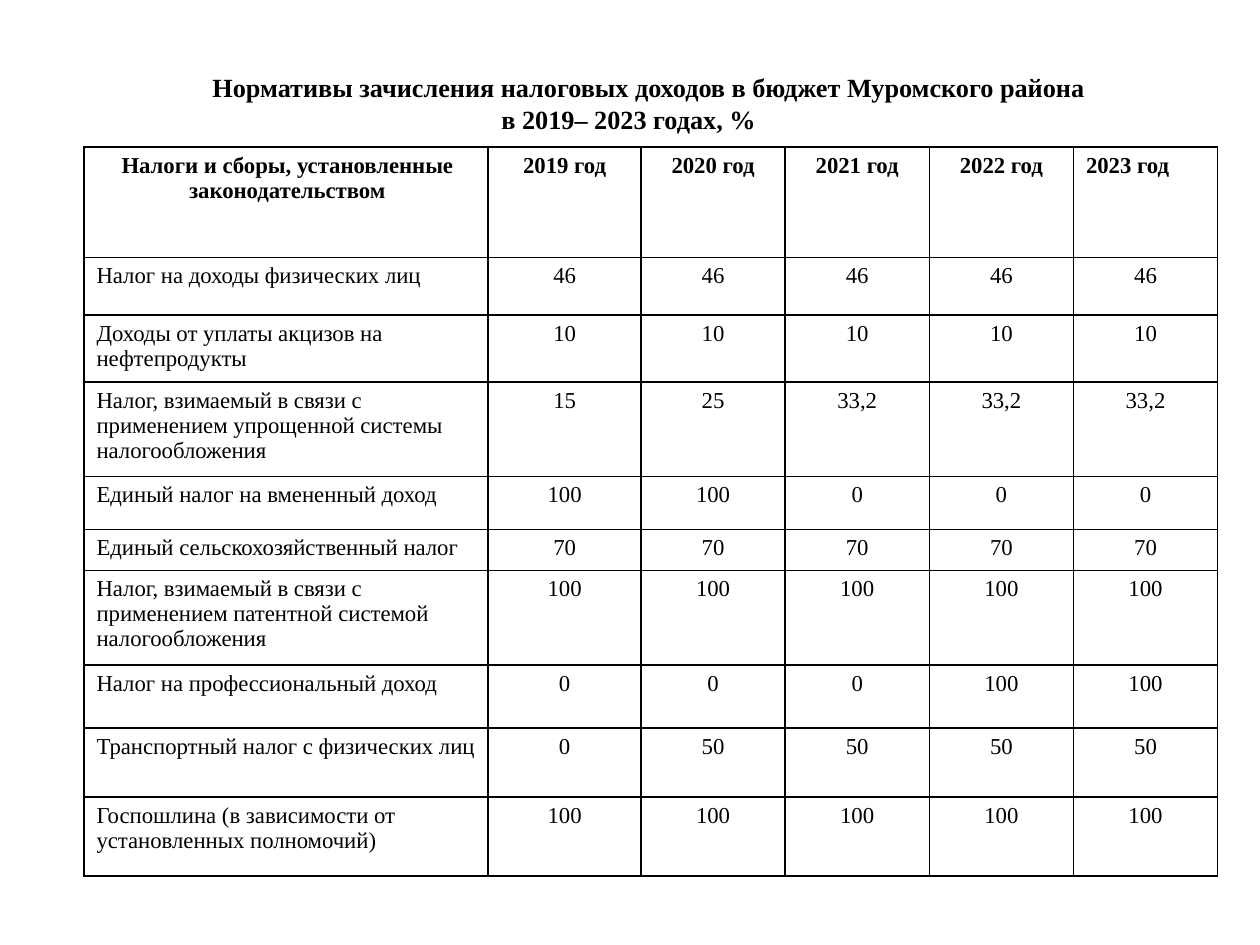
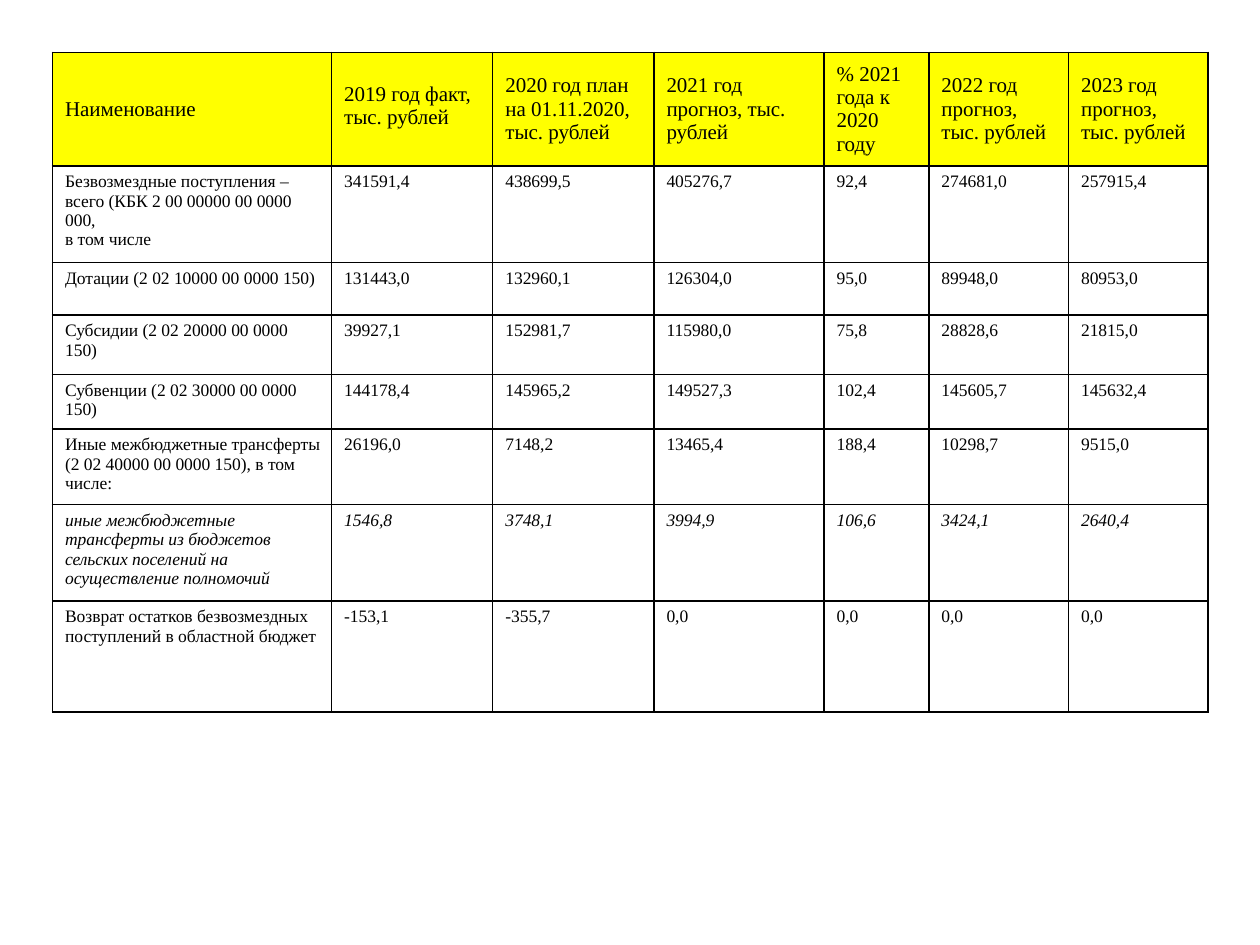
"""Builds two slides of tables on the district budget's tax rates and transfers."""
import pptx
import pptx.dml.color
import pptx.enum.text
import pptx.util
from lxml import etree
from pptx.oxml.ns import qn

Pt = pptx.util.Pt
ALIGN = pptx.enum.text.PP_ALIGN
ANCHOR = pptx.enum.text.MSO_ANCHOR
BLACK = pptx.dml.color.RGBColor(0x00, 0x00, 0x00)
YELLOW = pptx.dml.color.RGBColor(0xFF, 0xFF, 0x00)
FONT = "Times New Roman"
TITLE_ONLY, BLANK = 5, 6

TITLE = "Нормативы зачисления налоговых доходов в бюджет Муромского района\nв 2019– 2023 годах, %"
RATES = [
    ("Налоги и сборы, установленные законодательством",
     "2019 год", "2020 год", "2021 год", "2022 год", "2023 год"),
    ("Налог на доходы физических лиц", "46", "46", "46", "46", "46"),
    ("Доходы от уплаты акцизов на нефтепродукты", "10", "10", "10", "10", "10"),
    ("Налог, взимаемый в связи с применением упрощенной системы налогообложения",
     "15", "25", "33,2", "33,2", "33,2"),
    ("Единый налог на вмененный доход", "100", "100", "0", "0", "0"),
    ("Единый сельскохозяйственный налог", "70", "70", "70", "70", "70"),
    ("Налог, взимаемый в связи с применением патентной системой налогообложения",
     "100", "100", "100", "100", "100"),
    ("Налог на профессиональный доход", "0", "0", "0", "100", "100"),
    ("Транспортный налог с физических лиц", "0", "50", "50", "50", "50"),
    ("Госпошлина (в зависимости от установленных полномочий)",
     "100", "100", "100", "100", "100"),
]
RATE_WIDTHS = [231, 87.3] + [82.4] * 4
RATE_HEIGHTS = [63.2, 32.9, 38.2, 54, 30.2, 23.6, 54, 36, 39.4, 45.3]

TRANSFERS = [
    ("Наименование", "2019 год факт, тыс. рублей",
     "2020 год план на 01.11.2020, тыс. рублей", "2021 год прогноз, тыс. рублей",
     "% 2021 года к 2020 году", "2022 год прогноз, тыс. рублей",
     "2023 год прогноз, тыс. рублей"),
    ("Безвозмездные поступления – всего (КБК 2 00 00000 00 0000 000,\nв том числе",
     "341591,4", "438699,5", "405276,7", "92,4", "274681,0", "257915,4"),
    ("Дотации (2 02 10000 00 0000 150)",
     "131443,0", "132960,1", "126304,0", "95,0", "89948,0", "80953,0"),
    ("Субсидии (2 02 20000 00 0000 150)",
     "39927,1", "152981,7", "115980,0", "75,8", "28828,6", "21815,0"),
    ("Субвенции (2 02 30000 00 0000 150)",
     "144178,4", "145965,2", "149527,3", "102,4", "145605,7", "145632,4"),
    ("Иные межбюджетные трансферты (2 02 40000 00 0000 150), в том числе:",
     "26196,0", "7148,2", "13465,4", "188,4", "10298,7", "9515,0"),
    ("иные межбюджетные трансферты из бюджетов сельских поселений на осуществление полномочий",
     "1546,8", "3748,1", "3994,9", "106,6", "3424,1", "2640,4"),
    ("Возврат остатков безвозмездных поступлений в областной бюджет",
     "-153,1", "-355,7", "0,0", "0,0", "0,0", "0,0"),
]
TRANSFER_WIDTHS = [159.5, 92.1, 92.1, 97.2, 59.9, 79.8, 79.8]
TRANSFER_HEIGHTS = [64.8, 55.3, 30, 34, 31.1, 43.3, 55.1, 63.3]
ITALIC_ROW = 6


def write(frame, text, size, bold=False, italic=False, align=ALIGN.LEFT):
    for number, line in enumerate(text.split("\n")):
        para = frame.add_paragraph() if number else frame.paragraphs[0]
        para.alignment = align
        para.space_before = Pt(0)
        span = para.add_run()
        span.text = line
        span.font.name, span.font.size = FONT, Pt(size)
        span.font.bold, span.font.italic = bold, italic
        span.font.color.rgb = BLACK


def outline(cell):
    properties = cell._tc.get_or_add_tcPr()
    for side in ("a:lnL", "a:lnR", "a:lnT", "a:lnB"):
        line = etree.SubElement(properties, qn(side), w=str(Pt(1)))
        solid = etree.SubElement(line, qn("a:solidFill"))
        etree.SubElement(solid, qn("a:srgbClr"), val=str(BLACK))


def add_grid(page, left, top, rows, widths, heights, style, header_fill=None):
    frame = page.shapes.add_table(len(rows), len(widths), Pt(left), Pt(top),
                                  Pt(sum(widths)), Pt(sum(heights)))
    grid = frame.table
    grid.first_row = grid.horz_banding = False
    for column, width in zip(grid.columns, widths):
        column.width = Pt(width)
    for row, height in zip(grid.rows, heights):
        row.height = Pt(height)
    for r, values in enumerate(rows):
        for c, value in enumerate(values):
            cell = grid.cell(r, c)
            outline(cell)
            if r == 0 and header_fill is not None:
                cell.fill.solid()
                cell.fill.fore_color.rgb = header_fill
                cell.vertical_anchor = ANCHOR.MIDDLE
            else:
                cell.fill.background()
            if c == 0:
                cell.margin_right = Pt(6)
            write(cell.text_frame, value, **style(r, c))
    return grid


def rate_style(row, column):
    last_year = len(RATE_WIDTHS) - 1
    left = column == last_year if row == 0 else column == 0
    return dict(size=13, bold=row == 0, align=ALIGN.LEFT if left else ALIGN.CENTER)


def transfer_style(row, column):
    return dict(size=12 if row == 0 else 10, italic=row == ITALIC_ROW)


def add_rates(deck):
    page = deck.slides.add_slide(deck.slide_layouts[TITLE_ONLY])
    title = page.shapes.title
    title.left, title.top, title.width, title.height = Pt(36), Pt(36), Pt(646.5), Pt(46)
    frame = title.text_frame
    frame.auto_size = pptx.enum.text.MSO_AUTO_SIZE.NONE
    frame.vertical_anchor = ANCHOR.MIDDLE
    write(frame, TITLE, 15, bold=True, align=ALIGN.CENTER)
    frame.paragraphs[0]._p.get_or_add_pPr().set("indent", str(Pt(23)))
    add_grid(page, 48, 84, RATES, RATE_WIDTHS, RATE_HEIGHTS, rate_style)


def add_transfers(deck):
    page = deck.slides.add_slide(deck.slide_layouts[BLANK])
    grid = add_grid(page, 30, 30, TRANSFERS, TRANSFER_WIDTHS, TRANSFER_HEIGHTS,
                    transfer_style, YELLOW)
    fact_header = grid.cell(0, 1)
    fact_header.vertical_anchor = ANCHOR.TOP
    fact_header.margin_top = Pt(17.4)


def main():
    deck = pptx.Presentation()
    deck.slide_width, deck.slide_height = Pt(720), Pt(540)
    add_rates(deck)
    add_transfers(deck)
    deck.save("out.pptx")


if __name__ == "__main__":
    main()
